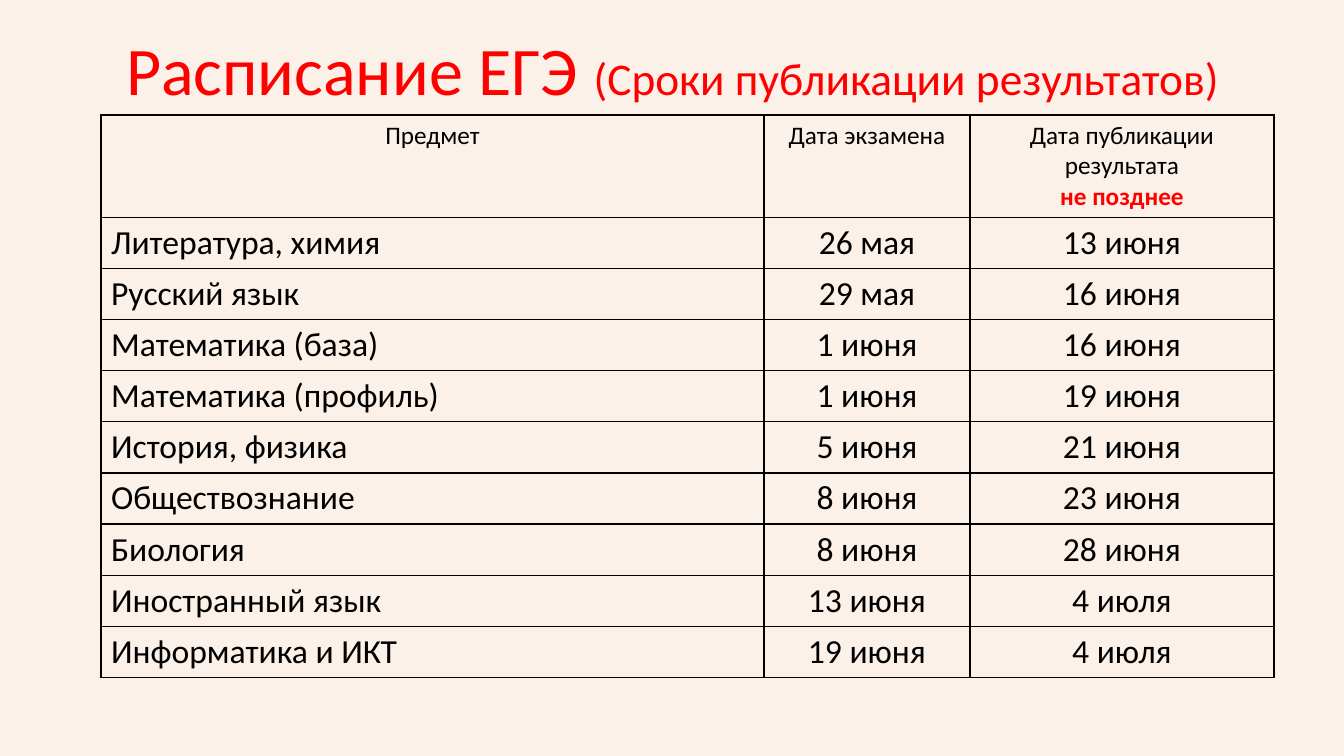
from lxml.etree import SubElement
from pptx import Presentation
from pptx.dml.color import RGBColor
from pptx.enum.text import MSO_ANCHOR, MSO_AUTO_SIZE, PP_ALIGN
from pptx.oxml.ns import qn
from pptx.util import Emu, Pt

COLORS = {"background": "FCF1E9", "accent": "FF0000", "text": "000000", "border": "000000"}
FONT = "Calibri"
BORDER_WIDTH = Pt(1)
COLUMN_WIDTHS = [663, 206, 304]
HEADER_HEIGHT, ROW_HEIGHT = 102, 51
SCHEDULE = [
    ("Предмет", "Дата экзамена", "Дата публикации результата\nне позднее"),
    ("Литература, химия", "26 мая", "13 июня"),
    ("Русский язык", "29 мая", "16 июня"),
    ("Математика (база)", "1 июня", "16 июня"),
    ("Математика (профиль)", "1 июня", "19 июня"),
    ("История, физика", "5 июня", "21 июня"),
    ("Обществознание", "8 июня", "23 июня"),
    ("Биология", "8 июня", "28 июня"),
    ("Иностранный язык", "13 июня", "4 июля"),
    ("Информатика и ИКТ", "19 июня", "4 июля"),
]


def px(count):
    """Convert pixels, 100.8 to the inch, to EMU."""
    return Emu(round(count * 914400 / 100.8))


def style_font(font, size, color, bold=False):
    font.name, font.size, font.bold = FONT, Pt(size), bold
    font.color.rgb = RGBColor.from_string(COLORS[color])


deck = Presentation()
deck.slide_width, deck.slide_height = px(1344), px(756)
slide = deck.slides.add_slide(deck.slide_layouts[5])
slide.background.fill.solid()
slide.background.fill.fore_color.rgb = RGBColor.from_string(COLORS["background"])

title = slide.shapes.title
title.left, title.top, title.width, title.height = px(93), px(20), px(1159), px(107)
frame = title.text_frame
frame.word_wrap = True
frame.auto_size = MSO_AUTO_SIZE.NONE
frame.vertical_anchor = MSO_ANCHOR.MIDDLE
heading = frame.paragraphs[0]
heading.alignment = PP_ALIGN.CENTER
heading.line_spacing = 0.9
for text, size in [("Расписание ЕГЭ ", 48.6), ("(Сроки публикации результатов)", 32.4)]:
    span = heading.add_run()
    span.text = text
    style_font(span.font, size, "accent")

table_height = HEADER_HEIGHT + ROW_HEIGHT * (len(SCHEDULE) - 1)
table = slide.shapes.add_table(
    len(SCHEDULE), len(COLUMN_WIDTHS), px(101), px(115), px(sum(COLUMN_WIDTHS)), px(table_height)
).table
table.first_row = table.horz_banding = False
for column, width in zip(table.columns, COLUMN_WIDTHS):
    column.width = px(width)

for row_index, entries in enumerate(SCHEDULE):
    is_header = row_index == 0
    table.rows[row_index].height = px(HEADER_HEIGHT if is_header else ROW_HEIGHT)
    for column_index, text in enumerate(entries):
        cell = table.cell(row_index, column_index)
        cell.text_frame.text = text
        centred = is_header or column_index > 0
        for line_index, para in enumerate(cell.text_frame.paragraphs):
            para.alignment = PP_ALIGN.CENTER if centred else PP_ALIGN.LEFT
            is_deadline = line_index == 1
            for span in para.runs:
                style_font(span.font, 18 if is_header else 24,
                           "accent" if is_deadline else "text", is_deadline)
        properties = cell._tc.get_or_add_tcPr()
        for side in ("lnL", "lnR", "lnT", "lnB"):
            line = SubElement(properties, qn(f"a:{side}"), w=str(BORDER_WIDTH))
            fill = SubElement(line, qn("a:solidFill"))
            SubElement(fill, qn("a:srgbClr"), val=COLORS["border"])
        cell.fill.background()

deck.save("out.pptx")
